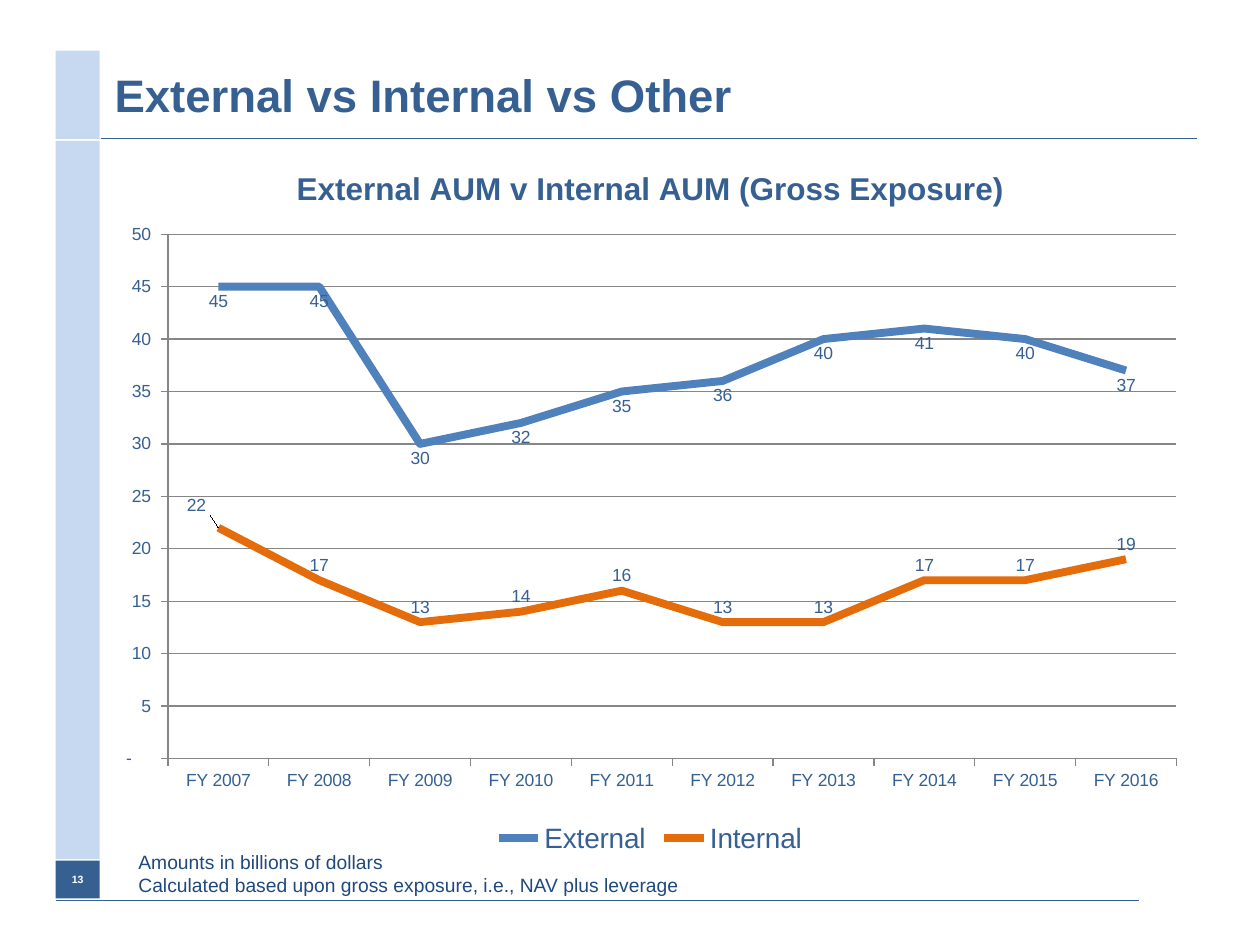
from dataclasses import dataclass
from typing import Any

from lxml.etree import SubElement
from pptx import Presentation
from pptx.chart.data import CategoryChartData
from pptx.dml.color import RGBColor
from pptx.enum.chart import (
    XL_CHART_TYPE as ChartType,
    XL_LABEL_POSITION as LabelPos,
    XL_LEGEND_POSITION as LegendPos,
    XL_TICK_MARK as Tick,
)
from pptx.enum.shapes import MSO_CONNECTOR as Conn, MSO_SHAPE as Shape
from pptx.enum.text import MSO_ANCHOR as Anchor, PP_ALIGN as Align
from pptx.oxml import parse_xml
from pptx.oxml.ns import nsdecls, qn
from pptx.util import Cm, Pt

COLORS = {
    "navy": "376092",
    "note": "1F497D",
    "pale": "C6D9F1",
    "white": "FFFFFF",
    "grid": "868686",
    "external": "4F81BD",
    "internal": "E46C0A",
}
NUM_FMT = '_(* #,##0_);_(* \\(#,##0\\);_(* "-"??_);_('
FONT = "Arial"


@dataclass
class Box:
    x: float
    y: float
    w: float
    h: float

    def lengths(self) -> tuple:
        return Cm(self.x), Cm(self.y), Cm(self.w), Cm(self.h)


@dataclass
class Bar:
    box: Box
    color: str


@dataclass
class Rule:
    x1: float
    x2: float
    y: float
    width: float


@dataclass
class Label:
    box: Box
    lines: list[str]
    color: str
    size: float
    bold: bool = False


@dataclass
class Line:
    name: str
    values: list[int]
    color: str
    pos: Any


BARS = [
    Bar(Box(1.12, 2.84, 0.89, 14.48), "pale"),
    Bar(Box(1.12, 1.02, 0.89, 1.78), "pale"),
]
PAGE = Bar(Box(1.12, 17.35, 0.89, 0.76), "navy")
RULES = [Rule(1.12, 22.96, 18.16, 0.75), Rule(2.03, 24.13, 2.79, 1)]
LABELS = [
    Label(Box(2.06, 1.02, 22.07, 1.78), ["External vs Internal vs Other"],
          "navy", 26, True),
    Label(Box(2.54, 17.09, 20.32, 1.02),
          ["Amounts in billions of dollars",
           "Calculated based upon gross exposure, i.e., NAV plus leverage"],
          "note", 11),
]
CHART = Box(2.06, 2.84, 22.1, 14.48)
TITLE = "External AUM v Internal AUM (Gross Exposure)"
YEARS = [f"FY {y}" for y in range(2007, 2017)]
LINES = [
    Line("External", [45, 45, 30, 32, 35, 36, 40, 41, 40, 37],
         "external", LabelPos.BELOW),
    Line("Internal", [22, 17, 13, 14, 16, 13, 13, 17, 17, 19],
         "internal", LabelPos.ABOVE),
]


def rgb(name: str) -> RGBColor:
    return RGBColor.from_string(COLORS[name])


def apply(obj: Any, fmt: dict[str, Any]) -> None:
    for key, value in fmt.items():
        setattr(obj, key, value)


def set_font(font: Any, size: float, color: str, bold: bool = False) -> None:
    apply(font, {"name": FONT, "size": Pt(size), "bold": bold})
    font.color.rgb = rgb(color)


def set_line(line: Any, color: str, width: float) -> None:
    line.color.rgb = rgb(color)
    line.width = Pt(width)


def add_bar(s: Any, bar: Bar) -> Any:
    sp = s.shapes.add_shape(Shape.RECTANGLE, *bar.box.lengths())
    sp.shadow.inherit = False
    sp.fill.solid()
    sp.fill.fore_color.rgb = rgb(bar.color)
    sp.line.fill.background()
    return sp


def add_rule(s: Any, rule: Rule) -> None:
    y = Cm(rule.y)
    c = s.shapes.add_connector(Conn.STRAIGHT, Cm(rule.x1), y, Cm(rule.x2), y)
    set_line(c.line, rule.color if hasattr(rule, "color") else "navy", rule.width)
    SubElement(c._element.spPr, qn("a:effectLst"))


def add_label(s: Any, label: Label) -> None:
    tf = s.shapes.add_textbox(*label.box.lengths()).text_frame
    apply(tf, {"word_wrap": True, "vertical_anchor": Anchor.MIDDLE})
    for i, text in enumerate(label.lines):
        p = tf.add_paragraph() if i else tf.paragraphs[0]
        r = p.add_run()
        r.text = text
        set_font(r.font, label.size, label.color, label.bold)


def add_page_number(s: Any, text: str) -> None:
    tf = add_bar(s, PAGE).text_frame
    apply(tf, {"margin_left": 0, "margin_right": 0,
               "vertical_anchor": Anchor.MIDDLE})
    p = tf.paragraphs[0]
    p.alignment = Align.CENTER
    r = p.add_run()
    r.text = text
    set_font(r.font, 6, "white", True)


def layout(**values: Any) -> Any:
    parts = "".join(f'<c:{k} val="{v}"/>' for k, v in values.items())
    return parse_xml(f"<c:layout {nsdecls('c')}><c:manualLayout>{parts}"
                     "</c:manualLayout></c:layout>")


def style_series(series: Any, line: Line) -> None:
    series.smooth = False
    set_line(series.format.line, line.color, 4.5)
    labels = series.data_labels
    apply(labels, {"show_value": True, "position": line.pos,
                   "number_format": NUM_FMT,
                   "number_format_is_linked": False})
    set_font(labels.font, 10, "navy")


def shift_first_label(series: Any, pos: Any) -> None:
    label = series.points[0].data_label
    set_font(label.font, 10, "navy")
    label.position = pos
    idx = series._element.find(".//" + qn("c:dLbl")).find(qn("c:idx"))
    idx.addnext(layout(x=-0.02, y=-0.01))


def add_line_chart(s: Any) -> None:
    data = CategoryChartData(number_format="General")
    data.categories = YEARS
    for line in LINES:
        data.add_series(line.name, line.values)
    chart = s.shapes.add_chart(ChartType.LINE, *CHART.lengths(), data).chart
    set_font(chart.font, 10, "navy")

    r = chart.chart_title.text_frame.paragraphs[0].add_run()
    r.text = TITLE
    set_font(r.font, 18, "navy", True)

    apply(chart, {"has_legend": True})
    apply(chart.legend, {"position": LegendPos.BOTTOM,
                         "include_in_layout": False})
    set_font(chart.legend.font, 16, "navy")

    value_axis = chart.value_axis
    apply(value_axis, {"minimum_scale": 0, "maximum_scale": 50,
                       "major_unit": 5, "has_major_gridlines": True})
    apply(value_axis.tick_labels, {"number_format": NUM_FMT,
                                   "number_format_is_linked": False})
    set_line(value_axis.major_gridlines.format.line, "grid", 0.75)
    for axis in (chart.category_axis, value_axis):
        axis.major_tick_mark = Tick.OUTSIDE
        set_line(axis.format.line, "grid", 0.75)
        set_font(axis.tick_labels.font, 10, "navy")

    plot = chart.plots[0]
    plot.vary_by_categories = False
    for series, line in zip(plot.series, LINES):
        style_series(series, line)
    shift_first_label(plot.series[1], LINES[1].pos)

    area = chart._chartSpace.chart.plotArea
    for old in area.findall(qn("c:layout")):
        area.remove(old)
    area.insert(0, layout(layoutTarget="inner", xMode="edge", yMode="edge",
                          x=0.06, y=0.13, w=0.92, h=0.73))


def main() -> None:
    prs = Presentation()
    apply(prs, {"slide_width": Cm(25.4), "slide_height": Cm(19.05)})
    s = prs.slides.add_slide(prs.slide_layouts[6])
    for rule in RULES:
        add_rule(s, rule)
    for bar in BARS:
        add_bar(s, bar)
    add_page_number(s, "13")
    for label in LABELS:
        add_label(s, label)
    add_line_chart(s)
    prs.save("out.pptx")


if __name__ == "__main__":
    main()
